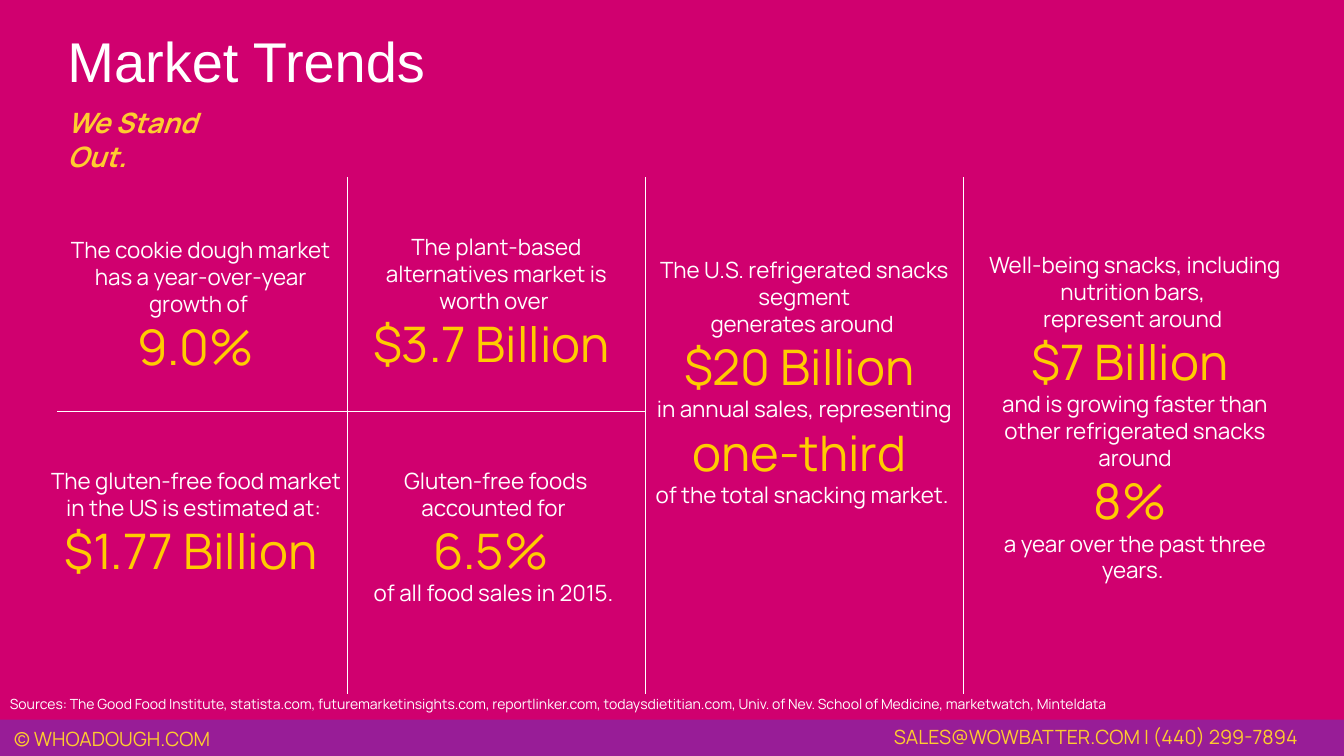
from lxml import etree
from pptx import Presentation
from pptx.dml import color
from pptx.enum import shapes, text
from pptx.oxml import ns
from pptx.util import Pt

COLORS = {
    "background": "D0006F",
    "footer": "981D97",
    "body": "FFFFFF",
    "figure": "FFCC00",
    "accent": "FECC2F",
}
FONT = "Manrope"

# Each statement alternates between plain wording and a highlighted figure.
STATEMENTS = [
    ((39.6, 165, 207.4, 131),
     ["The cookie dough market has a year-over-year growth of ", "9.0% "]),
    ((252, 163, 205.2, 130),
     ["The plant-based alternatives market is worth over ", "$3.7 Billion "]),
    ((26, 330, 228, 130),
     ["The gluten-free food market in the US is estimated at: ", "$1.77 Billion "]),
    ((247.7, 330, 213, 130),
     ["Gluten-free foods accounted for ", "6.5% ", "of all food sales in 2015. "]),
    ((460.8, 179.3, 227.5, 271),
     ["The U.S. refrigerated snacks segment\ngenerates around ", "$20 Billion ",
      "in annual sales, representing ", "one-third ",
      "of the total snacking market. "]),
    ((694.8, 175.7, 231.8, 291),
     ["Well-being snacks, including nutrition bars, \nrepresent around ", "$7 Billion ",
      "and is growing faster than other refrigerated snacks around", "8% ",
      "a year over the past three years. "]),
]
SOURCES = ("Sources: The Good Food Institute, statista.com, futuremarketinsights.com, "
           "reportlinker.com, todaysdietitian.com, Univ. of Nev. School of Medicine, "
           "marketwatch, Minteldata")


class Deck:
    def __init__(self):
        self.prs = Presentation()
        self.prs.slide_width, self.prs.slide_height = Pt(960), Pt(540)
        self.s = self.prs.slides.add_slide(self.prs.slide_layouts[5])
        self.paint(self.s.background.fill, "background")

    def rgb(self, name):
        return color.RGBColor.from_string(COLORS[name])

    def paint(self, fill, name):
        fill.solid()
        fill.fore_color.rgb = self.rgb(name)

    def style(self, p, size, name, font=FONT, bold=False, italic=False):
        f = p.font
        f.name, f.size, f.bold, f.italic = font, Pt(size), bold, italic
        f.color.rgb = self.rgb(name)

    def title(self, box, words):
        sp = self.s.shapes.title
        sp.left, sp.top, sp.width, sp.height = map(Pt, box)
        tf = sp.text_frame
        tf.text = words
        tf.auto_size = text.MSO_AUTO_SIZE.NONE
        tf.vertical_anchor = text.MSO_ANCHOR.TOP
        p = tf.paragraphs[0]
        p.alignment = text.PP_ALIGN.LEFT
        self.style(p, 40, "body", "Arial")

    def frame(self, box):
        tf = self.s.shapes.add_textbox(*map(Pt, box)).text_frame
        tf.word_wrap = True
        return tf

    def label(self, box, words, size, name, **weight):
        p = self.frame(box).paragraphs[0]
        p.text = words
        self.style(p, size, name, **weight)

    def statement(self, box, parts):
        tf = self.frame(box)
        lines = [(line, i % 2) for i, part in enumerate(parts)
                 for line in part.split("\n")]
        for i, (line, is_figure) in enumerate(lines):
            p = tf.add_paragraph() if i else tf.paragraphs[0]
            p.text = line
            p.alignment = text.PP_ALIGN.CENTER
            self.style(p, *((35, "figure") if is_figure else (16, "body")))

    def line(self, x1, y1, x2, y2):
        cx = self.s.shapes.add_connector(
            shapes.MSO_CONNECTOR.STRAIGHT, *map(Pt, (x1, y1, x2, y2)))
        cx.line.width = Pt(0.5)
        cx.line.color.rgb = self.rgb("body")
        etree.SubElement(cx._element.spPr, ns.qn("a:effectLst"))

    def bar(self, box, name):
        sp = self.s.shapes.add_shape(shapes.MSO_SHAPE.RECTANGLE, *map(Pt, box))
        sp.shadow.inherit = False
        self.paint(sp.fill, name)
        sp.line.fill.background()


def main():
    deck = Deck()
    deck.title((41, 15, 332.6, 55.4), "Market Trends")
    for x in (460.8, 248.4, 688.3):
        deck.line(x, 126.7, x, 495.4)
    deck.line(41, 293.8, 460.8, 293.8)
    for box, parts in STATEMENTS:
        deck.statement(box, parts)
    deck.label((0, 493.2, 870, 21), SOURCES, 10, "body")
    deck.label((41, 72, 136, 62), "We Stand Out.", 20, "accent", bold=True, italic=True)
    deck.bar((0, 514, 960, 26), "footer")
    deck.label((3, 516, 162, 24), "© WHOADOUGH.COM", 14, "accent")
    deck.label((631.4, 514, 324, 24), "SALES@WOWBATTER.COM | (440) 299-7894", 14, "accent")
    deck.prs.save("out.pptx")


if __name__ == "__main__":
    main()
